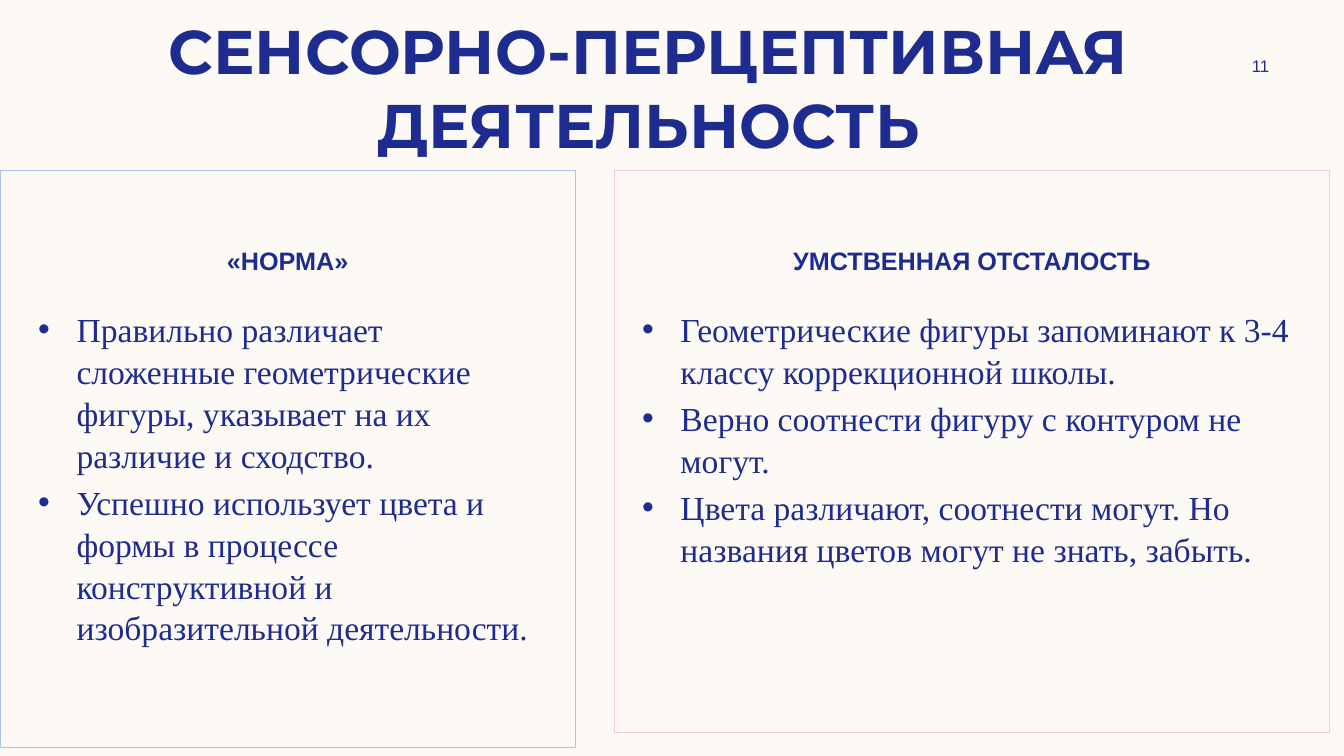
from lxml.etree import SubElement
from pptx import Presentation
from pptx.dml.color import RGBColor
from pptx.enum.shapes import MSO_SHAPE
from pptx.enum.text import MSO_ANCHOR, PP_ALIGN
from pptx.oxml.ns import qn
from pptx.util import Cm, Pt

INK = "1F2C8F"
TITLE = {"name": "Montserrat", "size": Pt(44), "bold": True}
NUMBER = {"name": "Arial", "size": Pt(12)}
HEADING = {"name": "Arial", "size": Pt(18), "bold": True}
BODY = {"name": "Times New Roman", "size": Pt(24)}


def color(target, value):
    target.rgb = RGBColor.from_string(value)


def write(p, text, style, align=PP_ALIGN.CENTER):
    p.alignment = align
    r = p.add_run()
    r.text = text
    for key, value in style.items():
        setattr(r.font, key, value)
    color(r.font.color, INK)


def add_text(s, box, anchor=MSO_ANCHOR.TOP):
    tf = s.shapes.add_textbox(*map(Cm, box)).text_frame
    tf.word_wrap = True
    tf.vertical_anchor = anchor
    return tf


def add_bullet(p):
    pPr = p._p.get_or_add_pPr()
    pPr.set("marL", str(Cm(0.97)))
    pPr.set("indent", str(-Cm(0.97)))
    SubElement(pPr, qn("a:buFont")).set("typeface", "Arial")
    SubElement(pPr, qn("a:buChar")).set("char", "•")


def add_header(s, box, title, number):
    x, y, w, h = box
    tf = add_text(s, box)
    write(tf.paragraphs[0], title, TITLE)
    # Page number at the right edge
    tf = add_text(s, (x + w - 1.89, y + 1.07, 2.74, 0.76), MSO_ANCHOR.MIDDLE)
    write(tf.paragraphs[0], number, NUMBER)


def add_panel(s, box, line, margin, heading, items):
    x, y, w, h = box
    # Frame with heading
    sp = s.shapes.add_shape(MSO_SHAPE.RECTANGLE, *map(Cm, box))
    sp.shadow.inherit = False
    sp.fill.background()
    color(sp.line.color, line)
    sp.line.width = Pt(1)
    tf = sp.text_frame
    tf.word_wrap = True
    tf.vertical_anchor = MSO_ANCHOR.TOP
    tf.margin_top = Cm(1.9)
    write(tf.paragraphs[0], heading, HEADING)

    # Bulleted list
    tf = add_text(s, (x + margin, y + 3.33, w - 2 * margin, h - 3.75))
    for i, item in enumerate(items):
        p = tf.add_paragraph() if i else tf.paragraphs[0]
        write(p, item, BODY, PP_ALIGN.LEFT)
        p.space_before = Pt(3.6)
        p.line_spacing = 1.04
        add_bullet(p)


def main():
    prs = Presentation()
    prs.slide_width, prs.slide_height = Cm(33.87), Cm(19.05)
    s = prs.slides.add_slide(prs.slide_layouts[6])
    s.background.fill.solid()
    color(s.background.fill.fore_color, "FDFAF6")

    add_header(s, (0.41, 0.2, 31.88, 2.97), "СЕНСОРНО-ПЕРЦЕПТИВНАЯ ДЕЯТЕЛЬНОСТЬ", "11")
    add_panel(s, (0, 4.29, 14.5, 14.55), "AAC3E8", 0.71, "«НОРМА»", [
        "Правильно различает сложенные геометрические фигуры, "
        "указывает на их различие и сходство.",
        "Успешно использует цвета и формы в процессе "
        "конструктивной и изобразительной деятельности.",
    ])
    add_panel(s, (15.49, 4.29, 18.01, 14.17), "F5CDCE", 0.44, "УМСТВЕННАЯ ОТСТАЛОСТЬ", [
        "Геометрические фигуры запоминают к 3-4 классу коррекционной школы.",
        "Верно соотнести фигуру с контуром не могут.",
        "Цвета различают, соотнести могут. Но названия цветов "
        "могут не знать, забыть.",
    ])
    prs.save("out.pptx")


if __name__ == "__main__":
    main()
